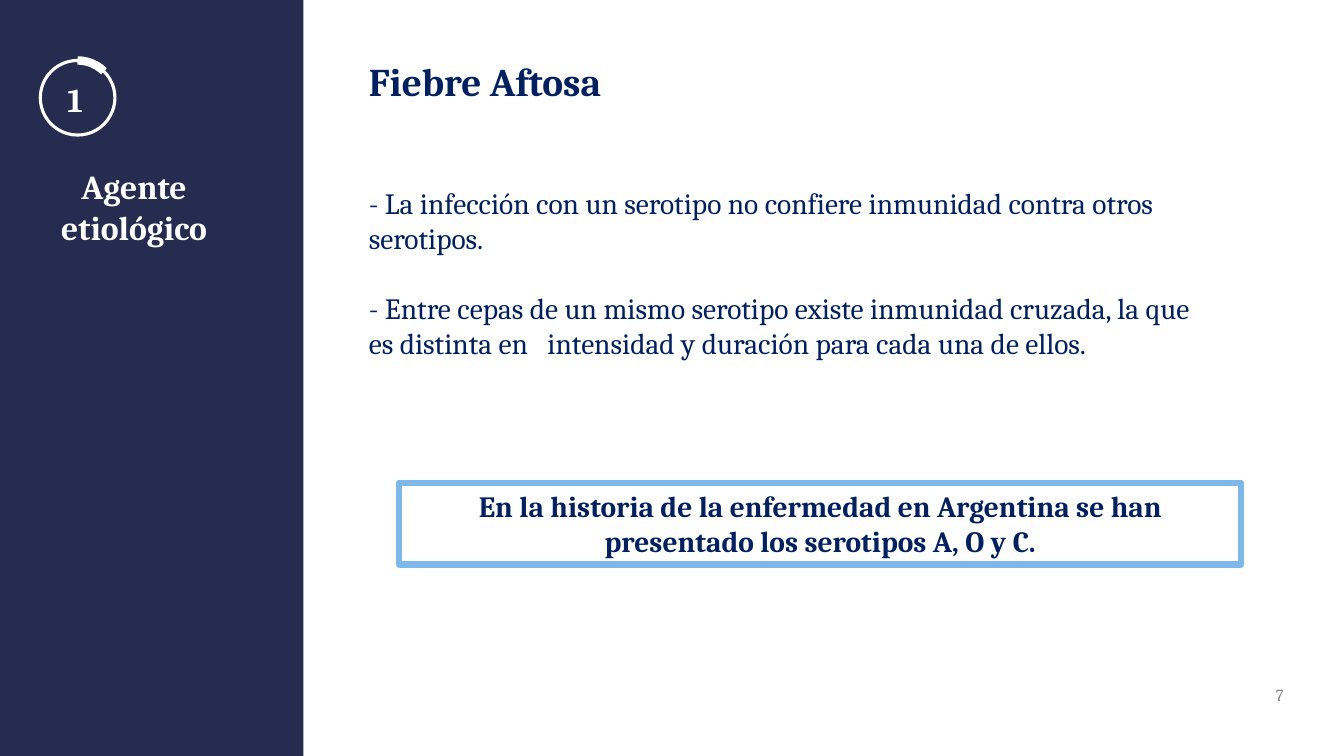
from pptx import Presentation
from pptx.dml.color import RGBColor
from pptx.enum.shapes import MSO_SHAPE
from pptx.enum.text import MSO_ANCHOR, PP_ALIGN
from pptx.util import Inches, Pt

RECT, OVAL, ARC = MSO_SHAPE.RECTANGLE, MSO_SHAPE.OVAL, MSO_SHAPE.ARC
LEFT, MID, RIGHT = PP_ALIGN.LEFT, PP_ALIGN.CENTER, PP_ALIGN.RIGHT
TOP, CENTER = MSO_ANCHOR.TOP, MSO_ANCHOR.MIDDLE

FONT = "Cambria"
WIDE, HIGH = 13.33, 7.5
NAVY, INK, SKY, WHITE, GRAY = "252C4F", "002060", "7EB7EA", "FFFFFF", "888888"

# Each paragraph: text, size, bold, space before in points
NUMBER = [("1", 24, True, 0)]
TOPIC = [("Agente etiológico", 24, True, 0)]
BODY = [
    ("Fiebre Aftosa", 28, True, 0),
    ("- La infección con un serotipo no confiere inmunidad contra otros serotipos.",
     21, False, 57.5),
    ("- Entre cepas de un mismo serotipo existe inmunidad cruzada, la que es "
     "distinta en   intensidad y duración para cada una de ellos.", 21, False, 24.6),
]
NOTE = [("En la historia de la enfermedad en Argentina se han presentado "
         "los serotipos A, O y C.", 21, True, 0)]
PAGE = [("7", 12, False, 0)]

PANEL = (0, 0, 3.01, HIGH)
RING = (0.4, 0.6, 0.74, 0.74)
# Arc angles in 60000ths of a degree, over 100000: from 270 to 315 degrees
SWEEP = (270 * 0.6, 315 * 0.6)


def color(code):
    return RGBColor.from_string(code)


def write(shape, lines, tint, align=LEFT, anchor=TOP, pad=0.05):
    frame = shape.text_frame
    frame.word_wrap = True
    frame.vertical_anchor = anchor
    frame.margin_top = frame.margin_bottom = Inches(pad)
    frame.text = "\n".join(line[0] for line in lines)
    for para, (_, size, bold, gap) in zip(frame.paragraphs, lines):
        para.alignment = align
        if gap:
            para.space_before = Pt(gap)
        font = para.runs[0].font
        font.name, font.size, font.bold = FONT, Pt(size), bold
        font.color.rgb = color(tint)


def label(slide, box, *args, **style):
    write(slide.shapes.add_textbox(*map(Inches, box)), *args, **style)


def draw(slide, kind, box, fill=None, line=None, width=0):
    shape = slide.shapes.add_shape(kind, *map(Inches, box))
    shape.shadow.inherit = False
    if fill:
        shape.fill.solid()
        shape.fill.fore_color.rgb = color(fill)
    else:
        shape.fill.background()
    if line:
        shape.line.color.rgb = color(line)
        shape.line.width = Pt(width)
    else:
        shape.line.fill.background()
    return shape


def main():
    deck = Presentation()
    deck.slide_width, deck.slide_height = Inches(WIDE), Inches(HIGH)
    slide = deck.slides.add_slide(deck.slide_layouts[6])

    draw(slide, RECT, PANEL, fill=NAVY)
    label(slide, (9.83, 6.69, 3, 0.4), PAGE, GRAY, align=RIGHT, anchor=CENTER)
    label(slide, (0.57, 0.73, 0.57, 0.52), NUMBER, WHITE)
    draw(slide, OVAL, RING, line=WHITE, width=2.25)
    arc = draw(slide, ARC, RING, line=WHITE, width=6)
    arc.adjustments[0], arc.adjustments[1] = SWEEP

    label(slide, (3.56, 0.52, 8.4, 6.13), BODY, INK)
    note = draw(slide, RECT, (3.96, 4.79, 8.35, 0.81), line=SKY, width=4.5)
    write(note, NOTE, INK, align=MID)
    label(slide, (0.35, 1.55, 1.96, 1.05), TOPIC, WHITE, align=MID, pad=0.1)

    deck.save("out.pptx")


if __name__ == "__main__":
    main()
